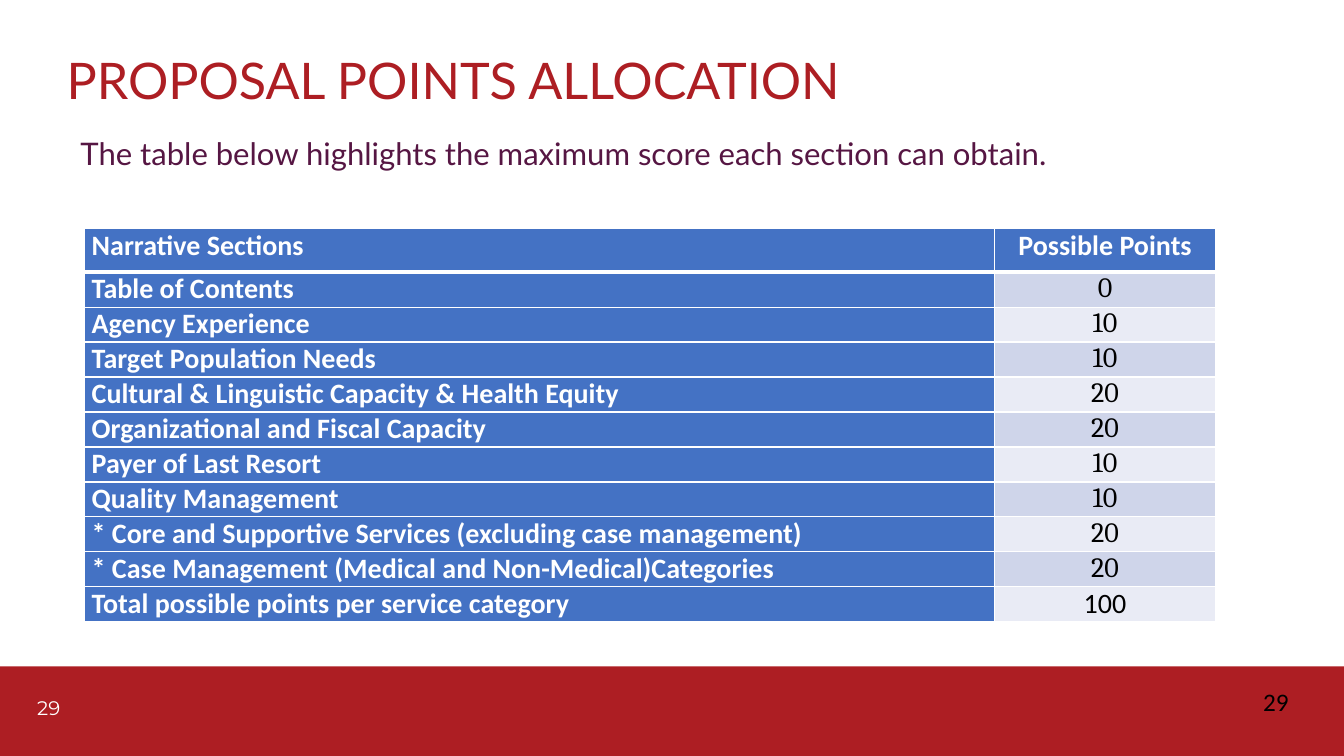
from lxml import etree
from pptx import Presentation
from pptx.dml.color import RGBColor
from pptx.enum.shapes import MSO_SHAPE as Shape
from pptx.enum.text import MSO_ANCHOR as Anchor, PP_ALIGN as Align
from pptx.oxml.ns import qn
from pptx.util import Inches, Pt

RED, PLUM, BLUE = "AD1E23", "561643", "4472C4"
WHITE, BLACK = "FFFFFF", "000000"
BANDS = ("CFD5EA", "E9EBF5")

SECTIONS = [
    ("Table of Contents", 0),
    ("Agency Experience", 10),
    ("Target Population Needs", 10),
    ("Cultural & Linguistic Capacity & Health Equity", 20),
    ("Organizational and Fiscal Capacity", 20),
    ("Payer of Last Resort", 10),
    ("Quality Management", 10),
    ("* Core and Supportive Services (excluding case management)", 20),
    ("* Case Management (Medical and Non-Medical)Categories", 20),
    ("Total possible points per service category", 100),
]


def color(hex_text):
    return RGBColor.from_string(hex_text)


def write(frame, text, size=20, font="Calibri", ink=BLACK, bold=False,
          align=Align.LEFT, anchor=Anchor.TOP, spacing=1.0):
    frame.word_wrap = True
    frame.vertical_anchor = anchor
    para = frame.paragraphs[0]
    para.alignment = align
    para.line_spacing = spacing
    para.space_before = Pt(0)
    span = para.add_run()
    span.text = text
    span.font.size = Pt(size)
    span.font.name = font
    span.font.bold = bold
    span.font.color.rgb = color(ink)


def place(shape, left, top, width, height):
    shape.left, shape.top = Inches(left), Inches(top)
    shape.width, shape.height = Inches(width), Inches(height)


def add_text(page, text, left, top, width, height, **style):
    box = page.shapes.add_textbox(*map(Inches, (left, top, width, height)))
    write(box.text_frame, text, **style)


def add_footer_band(page):
    band = page.shapes.add_shape(Shape.RECTANGLE, 0, Inches(6.61), Inches(13.33), Inches(0.89))
    band.shadow.inherit = False
    band.fill.solid()
    band.fill.fore_color.rgb = color(RED)
    band.line.fill.background()


def set_borders(cell, bottom=1):
    properties = cell._tc.get_or_add_tcPr()
    widths = {"lnL": 1, "lnR": 1, "lnT": 1, "lnB": bottom}
    for position, (side, width) in enumerate(widths.items()):
        line = etree.Element(qn(f"a:{side}"), w=str(Pt(width)))
        fill = etree.SubElement(line, qn("a:solidFill"))
        etree.SubElement(fill, qn("a:srgbClr"), val=WHITE)
        properties.insert(position, line)


def fill_cell(cell, text, fill, bottom=1, **style):
    cell.margin_left = cell.margin_right = Inches(0.07)
    cell.margin_top = cell.margin_bottom = 0
    cell.fill.solid()
    cell.fill.fore_color.rgb = color(fill)
    set_borders(cell, bottom)
    write(cell.text_frame, text, **style)


def add_points_table(page):
    frame = page.shapes.add_table(len(SECTIONS) + 1, 2, Inches(0.84), Inches(2.27),
                                  Inches(11.22), Inches(3.9))
    table = frame.table
    table.columns[0].width, table.columns[1].width = Inches(9.02), Inches(2.2)
    label = {"ink": WHITE, "bold": True}

    # Header row
    table.rows[0].height = Inches(0.43)
    fill_cell(table.cell(0, 0), "Narrative Sections", BLUE, bottom=3, **label)
    fill_cell(table.cell(0, 1), "Possible Points", BLUE, bottom=3, align=Align.CENTER, **label)

    # Section rows, with the total last
    for row, (section, points) in enumerate(SECTIONS, start=1):
        table.rows[row].height = Inches(0.347)
        font = "Calibri" if row == len(SECTIONS) else "Cambria"
        fill_cell(table.cell(row, 0), section, BLUE, **label)
        fill_cell(table.cell(row, 1), str(points), BANDS[(row - 1) % 2],
                  font=font, align=Align.CENTER)


def main():
    deck = Presentation()
    deck.slide_width, deck.slide_height = Inches(13.33), Inches(7.5)
    page = deck.slides.add_slide(deck.slide_layouts[5])

    # Footer band and its page number
    add_footer_band(page)
    add_text(page, "29", 0.27, 6.85, 0.66, 0.4, size=14, font="Montserrat", ink=WHITE)

    # Title and introduction
    title = page.shapes.title
    place(title, 0.56, 0.4, 11.5, 0.85)
    write(title.text_frame, "PROPOSAL POINTS ALLOCATION", size=36, font="Lato", ink=RED,
          anchor=Anchor.MIDDLE, spacing=0.9)
    add_text(page, "The table below highlights the maximum score each section can obtain.",
             0.7, 1.33, 11.5, 0.56, size=22.2, font="Lato", ink=PLUM, spacing=0.9)

    # Points table and right page number
    add_points_table(page)
    add_text(page, "29", 12.43, 6.76, 0.57, 0.4, size=18)

    deck.save("out.pptx")


if __name__ == "__main__":
    main()
